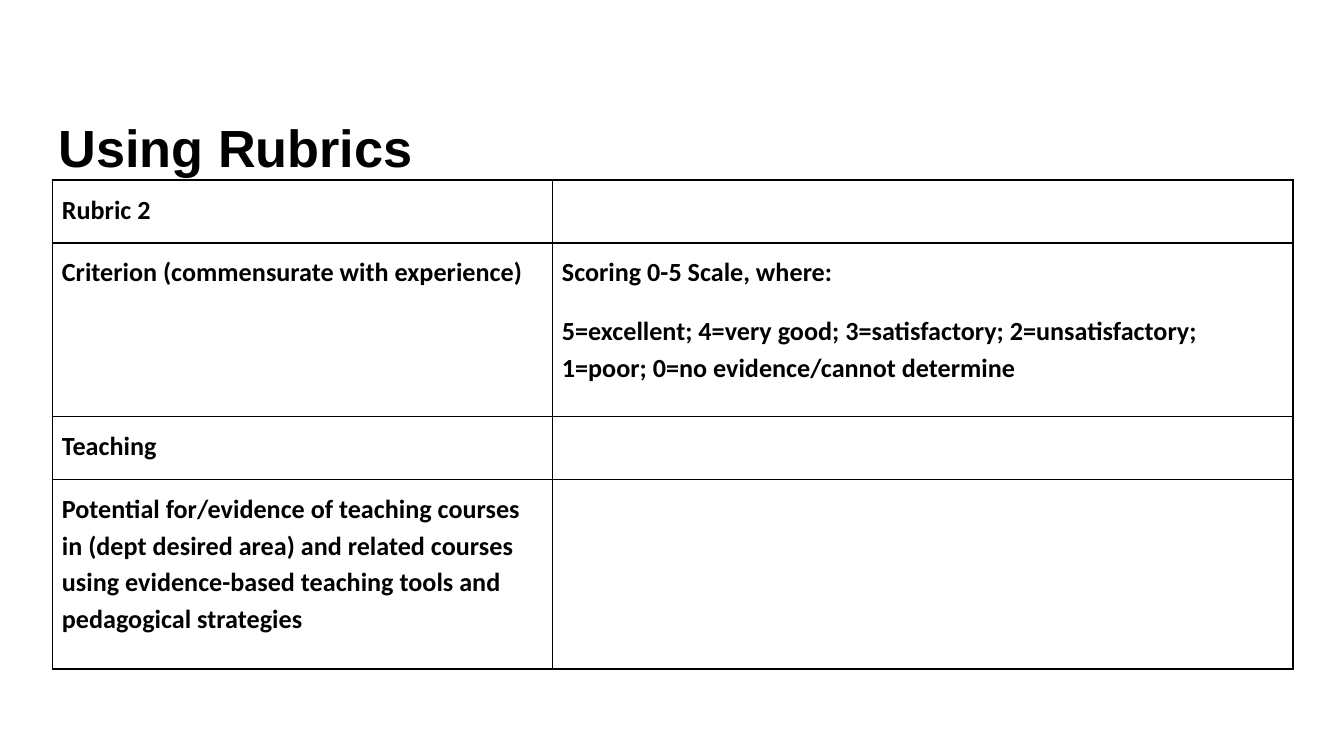
import lxml.etree
import pptx
import pptx.dml.color
import pptx.enum.text
import pptx.oxml.ns
import pptx.util

Cm, Pt = pptx.util.Cm, pptx.util.Pt

TITLE = "Using Rubrics"
# Each cell is a list of paragraphs.
RUBRIC = [
    (["Rubric 2"], []),
    (["Criterion (commensurate with experience)"],
     ["Scoring 0-5 Scale, where:",
      "5=excellent; 4=very good; 3=satisfactory; 2=unsatisfactory; "
      "1=poor; 0=no evidence/cannot determine"]),
    (["Teaching"], []),
    (["Potential for/evidence of teaching courses in (dept desired area) and "
      "related courses using evidence-based teaching tools and pedagogical "
      "strategies"], []),
]
COLUMN_WIDTHS = [9.45, 14]
ROW_HEIGHTS = [1.19, 3.28, 1.19, 3.58]

BLACK = pptx.dml.color.RGBColor(0, 0, 0)
THEME = {
    "title": {"name": "Arial", "size": Pt(28), "bold": True},
    "cell": {"name": "Calibri", "size": Pt(14), "bold": True},
    "text_color": BLACK,
    "border_color": BLACK,
    "border_width": Pt(1),
}
TITLE_FRAME = {
    "word_wrap": True,
    "vertical_anchor": pptx.enum.text.MSO_ANCHOR.TOP,
    "margin_left": Cm(0.25), "margin_right": Cm(0.25),
    "margin_top": Cm(0.37), "margin_bottom": Cm(0),
}
CELL_MARGINS = {f"margin_{side}": Cm(0.18)
                for side in ("left", "right", "top", "bottom")}
NEXT_PARAGRAPH = {"space_before": Pt(12), "space_after": Pt(12)}


def set_attributes(target, values):
    for name, value in values.items():
        setattr(target, name, value)


def set_font(font, style):
    set_attributes(font, THEME[style])
    font.color.rgb = THEME["text_color"]


def add_borders(cell):
    """Draw all four sides; border elements must precede the cell's fill."""
    qualified = pptx.oxml.ns.qn
    properties = cell._tc.get_or_add_tcPr()
    for index, side in enumerate(("lnL", "lnR", "lnT", "lnB")):
        line = lxml.etree.Element(qualified(f"a:{side}"),
                                  w=str(int(THEME["border_width"])))
        fill = lxml.etree.SubElement(line, qualified("a:solidFill"))
        lxml.etree.SubElement(fill, qualified("a:srgbClr"),
                              val=str(THEME["border_color"]))
        properties.insert(index, line)


def fill_cell(cell, texts):
    set_attributes(cell, CELL_MARGINS)
    cell.fill.background()
    add_borders(cell)
    for index, text in enumerate(texts):
        frame = cell.text_frame
        paragraph = frame.add_paragraph() if index else frame.paragraphs[0]
        paragraph.text = text
        paragraph.line_spacing = 1.15
        if index:
            set_attributes(paragraph, NEXT_PARAGRAPH)
        set_font(paragraph.runs[0].font, "cell")


def add_title(slide):
    frame = slide.shapes.add_textbox(
        Cm(0.86), Cm(1.8), Cm(23.67), Cm(1.6)).text_frame
    set_attributes(frame, TITLE_FRAME)
    paragraph = frame.paragraphs[0]
    paragraph.text = TITLE
    set_font(paragraph.runs[0].font, "title")


def add_rubric(slide):
    table = slide.shapes.add_table(
        len(ROW_HEIGHTS), len(COLUMN_WIDTHS), Cm(0.99), Cm(3.4),
        Cm(sum(COLUMN_WIDTHS)), Cm(sum(ROW_HEIGHTS))).table
    set_attributes(table, {"first_row": False, "horz_banding": False})
    for column, width in zip(table.columns, COLUMN_WIDTHS):
        column.width = Cm(width)
    for row, height, contents in zip(table.rows, ROW_HEIGHTS, RUBRIC):
        row.height = Cm(height)
        for cell, texts in zip(row.cells, contents):
            fill_cell(cell, texts)


def main():
    presentation = pptx.Presentation()
    presentation.slide_width, presentation.slide_height = Cm(25.4), Cm(14.29)
    slide = presentation.slides.add_slide(presentation.slide_layouts[6])
    add_title(slide)
    add_rubric(slide)
    presentation.save("out.pptx")


if __name__ == "__main__":
    main()
